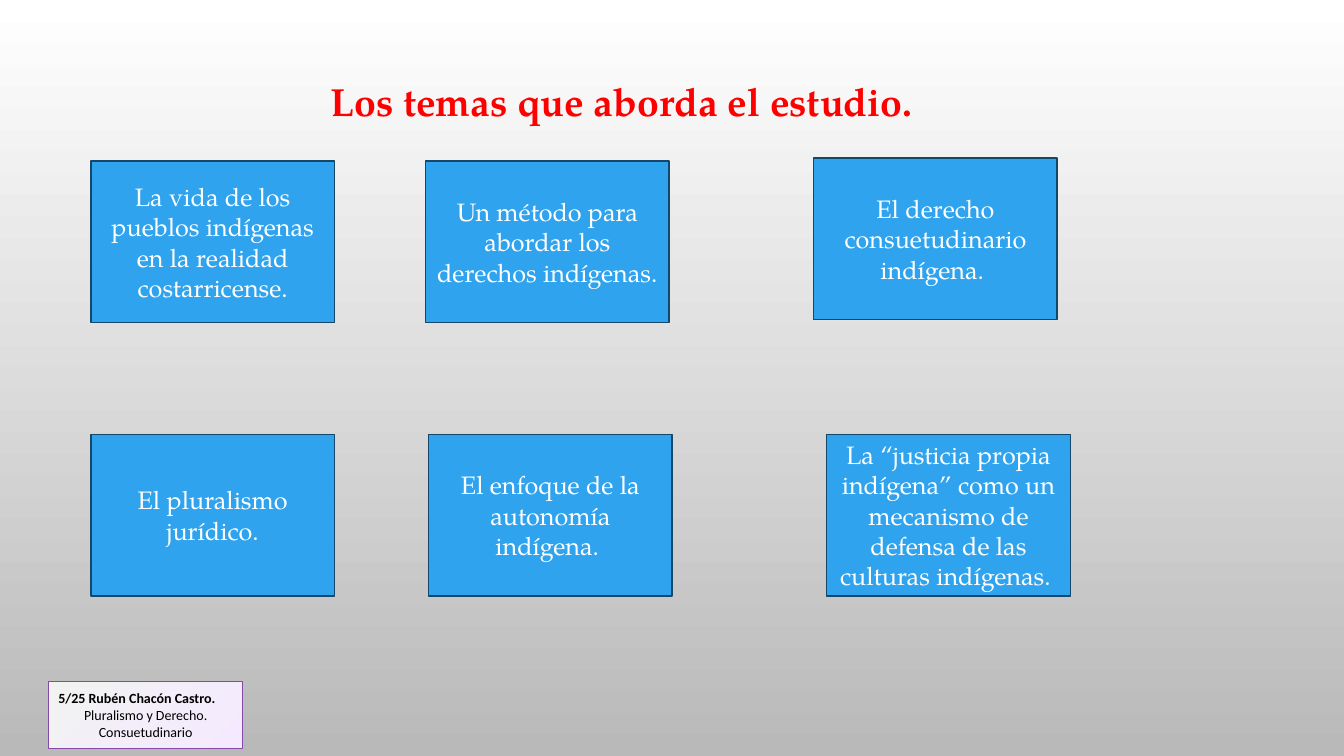
from dataclasses import dataclass

from pptx import Presentation as Deck
from pptx.dml.color import RGBColor as Color
from pptx.enum.shapes import MSO_SHAPE as Form
from pptx.enum.text import MSO_ANCHOR as Anchor, MSO_AUTO_SIZE as Fit, PP_ALIGN as Align
from pptx.util import Pt


@dataclass(frozen=True)
class Theme:
    serif: str = "TeX Gyre Pagella"
    sans: str = "Calibri"
    white: str = "FFFFFF"
    black: str = "000000"
    red: str = "FF0000"
    blue: str = "2FA3EE"
    navy: str = "154768"
    violet: str = "834AA7"
    sky: tuple[str, str] = ("FFFFFF", "B9B9B9")
    lilac: tuple[str, str] = ("F2F2F2", "F4E9FF")
    head: float = 28
    body: float = 18
    note: float = 10


@dataclass(frozen=True)
class Topic:
    left: float
    top: float
    text: str


THEME = Theme()
WIDE, HIGH = 174.24, 115.2
UPPER, LOWER = 115.2, 310.32
TOPICS = [
    Topic(64.8, UPPER, "La vida de los pueblos indígenas en la realidad costarricense."),
    Topic(303.84, UPPER, "Un método para abordar los derechos indígenas."),
    Topic(581.04, 113.04, "El derecho consuetudinario indígena. "),
    Topic(64.8, LOWER, "El pluralismo jurídico."),
    Topic(306, LOWER, "El enfoque de la autonomía indígena. "),
    Topic(590.4, LOWER, "La “justicia propia indígena” como un mecanismo de defensa "
                        "de las culturas indígenas. "),
]


def write(para, text: str, *, size: float, font: str, color: str,
          bold: bool = False, align=Align.CENTER) -> None:
    para.alignment = align
    run = para.add_run()
    run.text = text
    run.font.size = Pt(size)
    run.font.name = font
    run.font.bold = bold
    run.font.color.rgb = Color.from_string(color)


def blend(fill, tones: tuple[str, str], angle: float) -> None:
    fill.gradient()
    fill.gradient_angle = angle
    for stop, tone in zip(fill.gradient_stops, tones):
        stop.color.rgb = Color.from_string(tone)


def add_box(slide, left: float, top: float, wide: float, high: float,
            edge: str, weight: float):
    box = slide.shapes.add_shape(Form.RECTANGLE, Pt(left), Pt(top), Pt(wide), Pt(high))
    box.shadow.inherit = False
    box.line.color.rgb = Color.from_string(edge)
    box.line.width = Pt(weight)
    box.text_frame.word_wrap = True
    box.text_frame.vertical_anchor = Anchor.MIDDLE
    return box


def add_note(slide) -> None:
    box = add_box(slide, 34.56, 486.72, 138.96, 48.24, THEME.violet, 0.75)
    blend(box.fill, THEME.lilac, 315)
    style = dict(size=THEME.note, font=THEME.sans, color=THEME.black)
    frame = box.text_frame
    write(frame.paragraphs[0], "5/25 Rubén Chacón Castro.", bold=True,
          align=Align.LEFT, **style)
    write(frame.add_paragraph(), "Pluralismo y Derecho. Consuetudinario", **style)


def add_title(slide) -> None:
    title = slide.shapes.title
    title.left, title.top = Pt(132.48), Pt(51.84)
    title.width, title.height = Pt(622.8), Pt(41.04)
    frame = title.text_frame
    frame.word_wrap = True
    frame.auto_size = Fit.NONE
    frame.vertical_anchor = Anchor.TOP
    write(frame.paragraphs[0], "Los temas que aborda el estudio.", size=THEME.head,
          font=THEME.serif, color=THEME.red, bold=True)


def add_topic(slide, topic: Topic) -> None:
    box = add_box(slide, topic.left, topic.top, WIDE, HIGH, THEME.navy, 1.25)
    box.fill.solid()
    box.fill.fore_color.rgb = Color.from_string(THEME.blue)
    write(box.text_frame.paragraphs[0], topic.text, size=THEME.body,
          font=THEME.serif, color=THEME.white)


def main() -> None:
    deck = Deck()
    deck.slide_width, deck.slide_height = Pt(960), Pt(540)
    slide = deck.slides.add_slide(deck.slide_layouts.get_by_name("Title Only"))
    blend(slide.background.fill, THEME.sky, 270)
    add_note(slide)
    add_title(slide)
    for topic in TOPICS:
        add_topic(slide, topic)
    deck.save("out.pptx")


if __name__ == "__main__":
    main()
